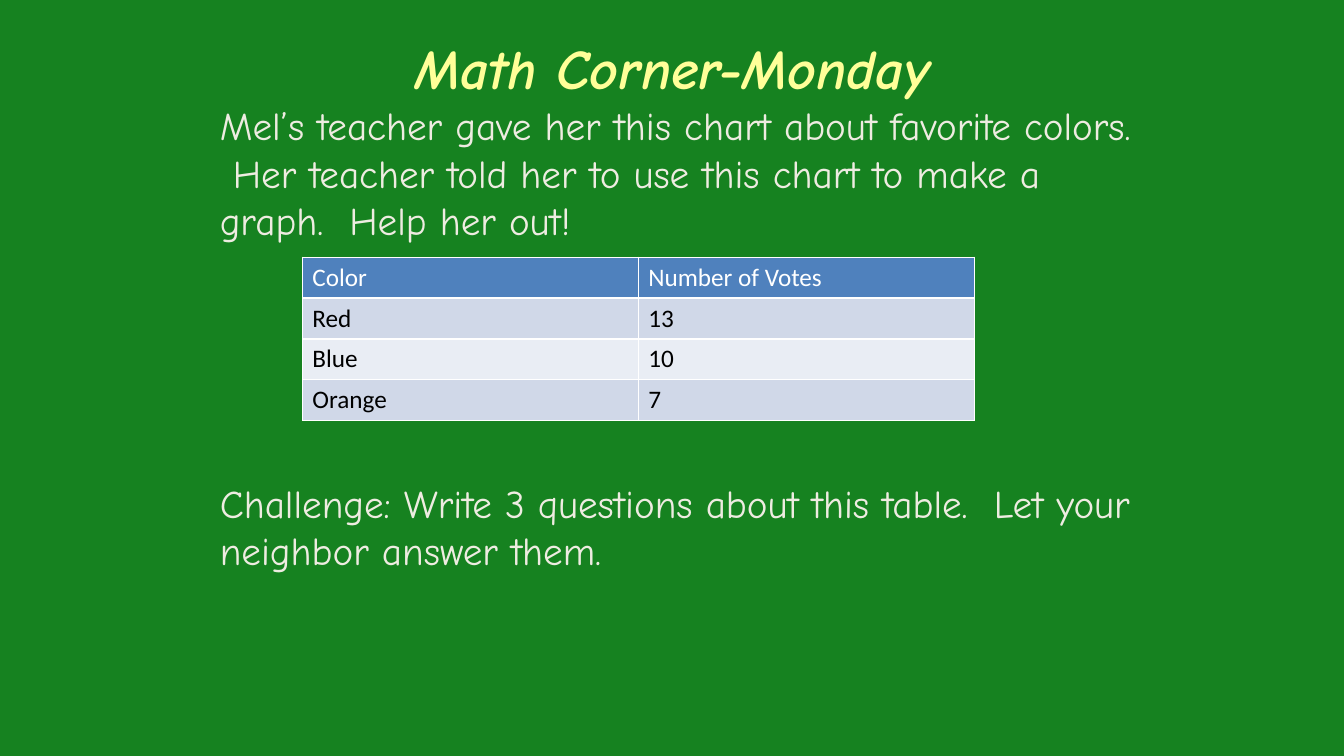
"""Build the Monday math corner slide with its table of color votes."""
import dataclasses

import lxml.etree
import pptx
import pptx.dml.color
import pptx.enum.text
import pptx.oxml.ns
import pptx.util

Cm = pptx.util.Cm
Pt = pptx.util.Pt


@dataclasses.dataclass(frozen=True)
class Theme:
    board: str = "168220"
    title: str = "FFFF99"
    chalk: str = "EEECE1"
    head: str = "4F81BD"
    bands: tuple = ("D0D8E8", "E9EDF4")
    white: str = "FFFFFF"
    black: str = "000000"
    hand: str = "Comic Neue"
    plain: str = "Calibri"
    large: int = 40
    body: int = 28
    small: int = 18


class Board:
    def __init__(self, deck, theme):
        self.theme = theme
        self.slide = deck.slides.add_slide(deck.slide_layouts[5])
        self.paint(self.slide.background.fill, theme.board)

    def paint(self, fill, color):
        fill.solid()
        fill.fore_color.rgb = pptx.dml.color.RGBColor.from_string(color)

    def style(self, para, face, size, color, strong=False):
        font = para.font
        font.name, font.size = face, Pt(size)
        font.bold = font.italic = strong
        font.color.rgb = pptx.dml.color.RGBColor.from_string(color)

    def title(self, text, left, top, width, height):
        shape = self.slide.shapes.title
        shape.left, shape.top = Cm(left), Cm(top)
        shape.width, shape.height = Cm(width), Cm(height)
        frame = shape.text_frame
        frame.text = text
        frame.auto_size = pptx.enum.text.MSO_AUTO_SIZE.NONE
        frame.vertical_anchor = pptx.enum.text.MSO_ANCHOR.MIDDLE
        para = frame.paragraphs[0]
        para.alignment = pptx.enum.text.PP_ALIGN.CENTER
        self.style(para, self.theme.hand, self.theme.large, self.theme.title, True)

    def prose(self, texts, gap, left, top, width, height):
        box = self.slide.shapes.add_textbox(Cm(left), Cm(top), Cm(width), Cm(height))
        frame = box.text_frame
        frame.word_wrap = True
        frame.auto_size = pptx.enum.text.MSO_AUTO_SIZE.SHAPE_TO_FIT_TEXT
        frame.text = "\n".join(texts)
        for para in frame.paragraphs:
            self.style(para, self.theme.hand, self.theme.body, self.theme.chalk)
        for para in frame.paragraphs[1:]:
            para.space_before = Pt(gap)

    def border(self, cell):
        props = cell._tc.get_or_add_tcPr()
        name = pptx.oxml.ns.qn
        for side in ("a:lnL", "a:lnR", "a:lnT", "a:lnB"):
            line = lxml.etree.SubElement(props, name(side), w=str(Pt(1)))
            fill = lxml.etree.SubElement(line, name("a:solidFill"))
            lxml.etree.SubElement(fill, name("a:srgbClr"), val=self.theme.white)

    def table(self, rows, left, top, width, height):
        theme = self.theme
        grid = self.slide.shapes.add_table(
            len(rows), len(rows[0]), Cm(left), Cm(top), Cm(width), Cm(height)
        ).table
        for i, row in enumerate(rows):
            back = theme.bands[(i - 1) % 2] if i else theme.head
            ink = theme.black if i else theme.white
            for j, text in enumerate(row):
                cell = grid.cell(i, j)
                cell.text = text
                self.style(cell.text_frame.paragraphs[0], theme.plain, theme.small, ink)
                self.border(cell)
                self.paint(cell.fill, back)


def main():
    deck = pptx.Presentation()
    deck.slide_width, deck.slide_height = Cm(33.87), Cm(19.05)
    board = Board(deck, Theme())
    board.title("Math Corner-Monday", 6.15, 0.84, 21.59, 1.7)
    board.prose(
        [
            "Mel’s teacher gave her this chart about favorite colors.  "
            "Her teacher told her to use this chart to make a graph.  Help her out!",
            "Challenge: Write 3 questions about this table.  "
            "Let your neighbor answer them.",
        ],
        168.5, 5.29, 2.44, 23.7, 12.22,
    )
    board.table(
        [
            ("Color", "Number of Votes"),
            ("Red", "13"),
            ("Blue", "10"),
            ("Orange", "7"),
        ],
        7.62, 6.48, 16.93, 4.12,
    )
    deck.save("out.pptx")


if __name__ == "__main__":
    main()
